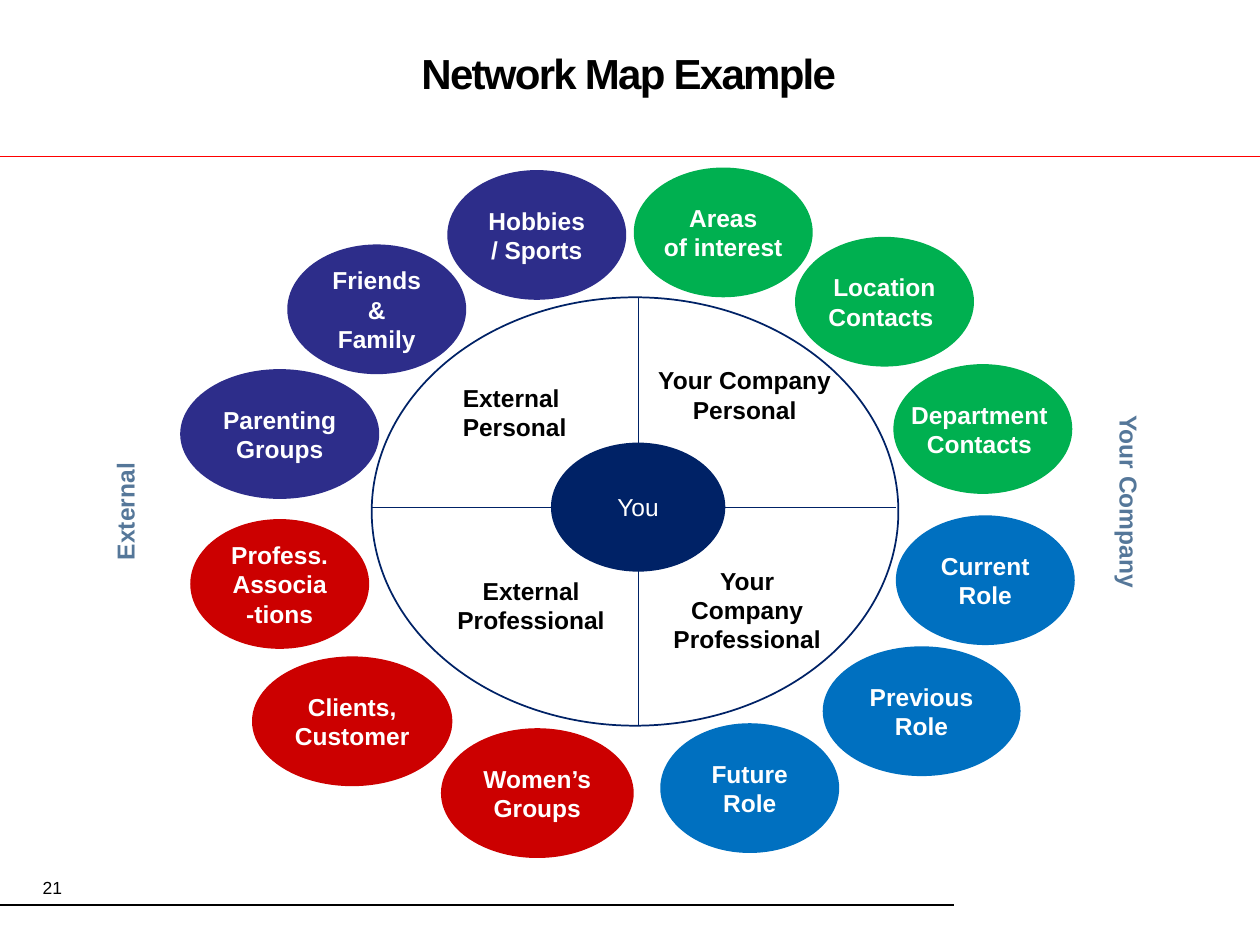
import pptx
import pptx.dml.color
import pptx.enum.shapes
import pptx.enum.text
import pptx.oxml
import pptx.util
from pptx.util import Inches

FONT = "Arial"
COLORS = {
    "black": "000000", "white": "FFFFFF", "rule": "FF0000", "navy": "002266",
    "side": "557799", "external personal": "2D2D8A", "external work": "CC0000",
    "company personal": "00B050", "company work": "0070C0",
}
ANCHOR = pptx.enum.text.MSO_ANCHOR
ALIGN = pptx.enum.text.PP_ALIGN

# Contacts by quadrant: text, left, top, width
CONTACT_HEIGHT = 1.03
CONTACTS = {
    "external personal": [
        ("Friends & Family", 2.28, 1.94, 1.42),
        ("Parenting Groups", 1.43, 2.93, 1.58),
        ("Hobbies / Sports", 3.55, 1.35, 1.42),
    ],
    "external work": [
        ("Profess. Associa-tions", 1.51, 4.12, 1.42),
        ("Clients, Customer", 2, 5.21, 1.59),
        ("Women’s Groups", 3.5, 5.78, 1.53),
    ],
    "company personal": [
        ("Areas\nof interest", 5.03, 1.33, 1.42),
        ("Location\nContacts ", 6.31, 1.88, 1.42),
        ("Department \nContacts ", 7.09, 2.89, 1.42),
    ],
    "company work": [
        ("Current\nRole", 7.11, 4.09, 1.42),
        ("Previous Role", 6.53, 5.13, 1.57),
        ("Future Role", 5.24, 5.74, 1.42),
    ],
}

# Quadrant labels: text, box, wrap
QUADRANTS = [
    ("External \nPersonal", (3.57, 2.99, 1.03, 0.57), False),
    ("Your Company Personal", (5.12, 2.85, 1.58, 0.57), True),
    ("External Professional", (3.42, 4.52, 1.59, 0.57), True),
    ("Your Company Professional", (5.2, 4.44, 1.46, 0.81), True),
]

# Side labels: text, box, rotation
SIDES = [
    ("External", (0.21, 3.89, 1.57, 0.34), 270),
    ("Your Company", (7.57, 3.81, 2.78, 0.34), 90),
]


def rgb(name):
    return pptx.dml.color.RGBColor.from_string(COLORS[name])


def write(frame, text, color, size=14, bold=True, align=ALIGN.CENTER, wrap=True):
    """Fill a text frame, one paragraph per line of text."""
    frame.word_wrap = wrap
    for index, line in enumerate(text.split("\n")):
        paragraph = frame.paragraphs[0] if index == 0 else frame.add_paragraph()
        paragraph.alignment = align
        run = paragraph.add_run()
        run.text = line
        run.font.name = FONT
        run.font.size = pptx.util.Pt(size)
        run.font.bold = bold
        run.font.color.rgb = rgb(color)


def add_label(slide, text, box, color="black", rotation=0, **style):
    label = slide.shapes.add_textbox(*map(Inches, box))
    label.rotation = rotation
    write(label.text_frame, text, color, **style)


def add_oval(slide, box, fill, line=None):
    oval = slide.shapes.add_shape(
        pptx.enum.shapes.MSO_SHAPE.OVAL, *map(Inches, box))
    oval.shadow.inherit = False
    oval.fill.solid()
    oval.fill.fore_color.rgb = rgb(fill)
    if line:
        oval.line.color.rgb = rgb(line)
        oval.line.width = pptx.util.Pt(1)
    else:
        oval.line.fill.background()
    oval.text_frame.vertical_anchor = ANCHOR.MIDDLE
    return oval


def add_line(slide, start, end, color, width=0.75):
    line = slide.shapes.add_connector(
        pptx.enum.shapes.MSO_CONNECTOR.STRAIGHT, *map(Inches, start + end))
    line.line.color.rgb = rgb(color)
    line.line.width = pptx.util.Pt(width)
    properties = line._element.spPr
    properties.append(pptx.oxml.parse_xml(
        '<a:effectLst xmlns:a="http://schemas.openxmlformats.org/drawingml/2006/main"/>'))


def set_title(slide, text):
    title = slide.shapes.title
    title.left, title.top, title.width, title.height = map(
        Inches, (0.49, 0, 9, 0.83))
    frame = title.text_frame
    frame.auto_size = pptx.enum.text.MSO_AUTO_SIZE.NONE
    frame.vertical_anchor = ANCHOR.BOTTOM
    frame.margin_bottom = Inches(0.05)
    write(frame, text, "black", size=24)
    paragraph = frame.paragraphs[0]
    paragraph.line_spacing = pptx.util.Pt(26)
    # Tighten the letters by one point
    paragraph.runs[0].font._element.set("spc", "-100")


def main():
    deck = pptx.Presentation()
    deck.slide_width, deck.slide_height = Inches(10), Inches(7.5)
    slide = deck.slides.add_slide(deck.slide_layouts.get_by_name("Title Only"))

    # Title, rules and page number
    set_title(slide, "Network Map Example")
    add_line(slide, (0, 1.24), (10, 1.24), "rule")
    add_line(slide, (-0.02, 7.18), (7.57, 7.18), "black", width=1)
    add_label(slide, "21", (0, 6.91, 0.59, 0.27), size=10, bold=False,
              align=ALIGN.RIGHT)

    # Contacts around the ring
    for quadrant, contacts in CONTACTS.items():
        for text, left, top, width in contacts:
            contact = add_oval(slide, (left, top, width, CONTACT_HEIGHT), quadrant)
            write(contact.text_frame, text, "white",
                  wrap=quadrant != "company personal")

    # Ring with its four quadrants
    add_oval(slide, (2.95, 2.36, 4.18, 3.4), "white", line="navy")
    for text, box, wrap in QUADRANTS:
        add_label(slide, text, box, wrap=wrap)
    add_line(slide, (5.07, 2.36), (5.07, 5.76), "navy")
    add_line(slide, (2.95, 4.03), (7.11, 4.03), "navy")

    # Centre and side labels
    you = add_oval(slide, (4.38, 3.52, 1.37, 1.01), "navy", line="navy")
    write(you.text_frame, "You", "white", bold=False, wrap=False)
    for text, box, rotation in SIDES:
        add_label(slide, text, box, color="side", rotation=rotation)

    deck.save("out.pptx")


if __name__ == "__main__":
    main()
